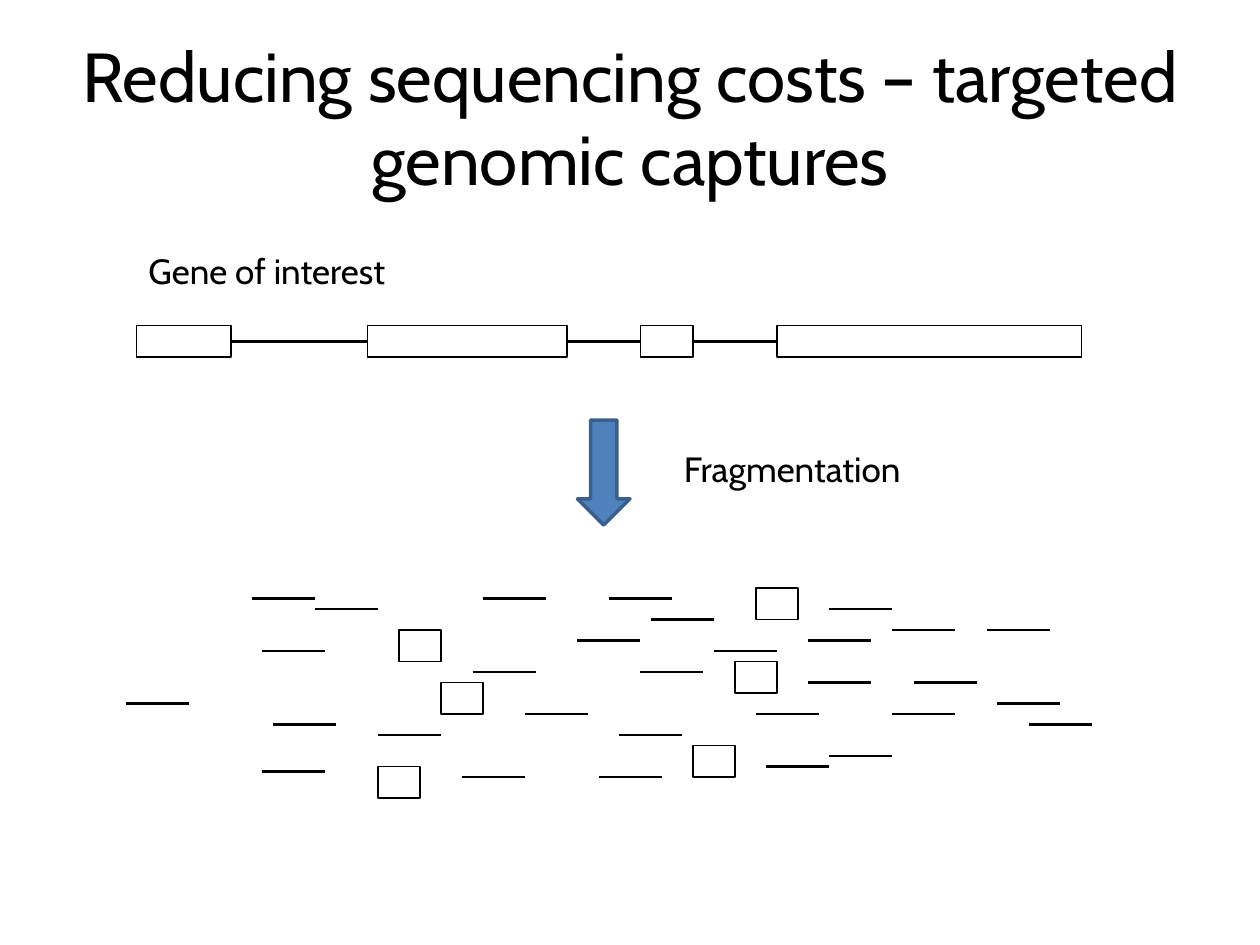
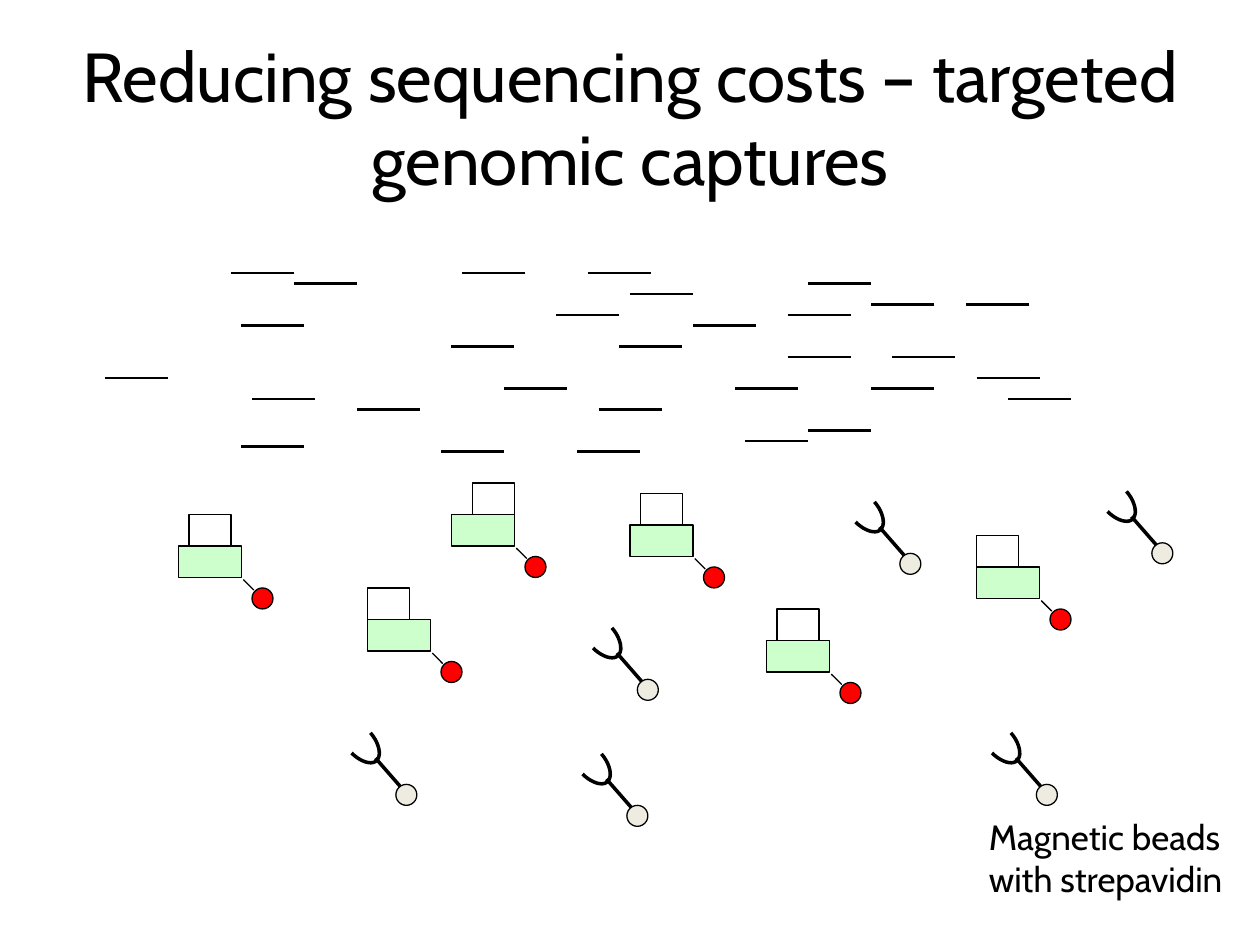
import pptx
import pptx.util
import pptx.dml.color
import pptx.enum.shapes
import pptx.enum.text
from lxml import etree
from pptx.oxml.ns import qn

SHAPE = pptx.enum.shapes.MSO_SHAPE
COLORS = {
    "ink": "000000",
    "paper": "FFFFFF",
    "arrow": "4F81BD",
    "arrow_edge": "3A5F8C",
    "probe": "CCFFCC",
    "biotin": "FF0000",
    "bead": "EEECE1",
}
FONT = "Cabin"
TITLE = "Reducing sequencing costs – targeted genomic captures"

# Drawing positions are counted in grid steps of a twelfth of an inch.
FRAGMENTS = [
    (24, 57), (46, 57), (58, 57), (30, 58), (79, 58), (62, 59),
    (85, 60), (94, 60), (55, 61), (77, 61), (25, 62), (68, 62),
    (45, 64), (61, 64), (77, 65), (87, 65), (12, 67), (95, 67),
    (50, 68), (72, 68), (85, 68), (26, 69), (98, 69), (36, 70),
    (59, 70), (79, 72), (73, 73), (25, 73.5), (44, 74), (57, 74),
]
EXONS = [(13, 9), (35, 19), (61, 5), (74, 29)]  # left, width
TARGETS = [(72, 56), (38, 60), (70, 63), (42, 65), (66, 71), (36, 73)]
# left and top of the probe, then how far its target is shifted right
PROBES = [(17, 52, 1), (60, 50, 1), (43, 49, 2),
          (35, 59, 0), (73, 61, 1), (93, 54, 0)]
BEADS = [(109, 51), (85, 52), (98, 74), (59, 76), (60, 64), (37, 74)]
FORK_CURVES = [
    [(-1.72, -4.2), (-0.88, -3.24), (-0.64, -2.04), (-1.12, -1.56)],
    [(-1.12, -1.56), (-1.6, -1.08), (-2.68, -1.44), (-3.52, -2.28)],
]


def grid(steps):
    return pptx.util.Inches(steps / 12)


def rgb(name):
    return pptx.dml.color.RGBColor.from_string(COLORS[name])


def bezier(points, steps=10):
    """Return points along a cubic curve."""
    a, b, c, d = points
    curve = []
    for i in range(steps + 1):
        t = i / steps
        u = 1 - t
        curve.append(tuple(
            u**3 * a[k] + 3 * u * u * t * b[k] + 3 * u * t * t * c[k] + t**3 * d[k]
            for k in (0, 1)))
    return curve


class Deck:
    def __init__(self):
        self.prs = pptx.Presentation()
        self.prs.slide_width = pptx.util.Inches(10)
        self.prs.slide_height = pptx.util.Inches(7.5)

    def new_slide(self):
        self.s = self.prs.slides.add_slide(self.prs.slide_layouts[5])
        self.s.background.fill.solid()
        self.s.background.fill.fore_color.rgb = rgb("paper")
        sp = self.s.shapes.title
        self.place(sp, 0.5, 0.3, 9, 1.25)
        tf = sp.text_frame
        tf.text = TITLE
        tf.auto_size = pptx.enum.text.MSO_AUTO_SIZE.NONE
        tf.vertical_anchor = pptx.enum.text.MSO_ANCHOR.MIDDLE
        tf.paragraphs[0].alignment = pptx.enum.text.PP_ALIGN.CENTER
        self.format_text(tf, 39.6)

    def place(self, sp, left, top, width, height):
        sp.left, sp.top = pptx.util.Inches(left), pptx.util.Inches(top)
        sp.width, sp.height = pptx.util.Inches(width), pptx.util.Inches(height)

    def format_text(self, tf, size):
        for p in tf.paragraphs:
            for r in p.runs:
                r.font.name = FONT
                r.font.size = pptx.util.Pt(size)
                r.font.color.rgb = rgb("ink")

    def label(self, text, left, top, height=0.44):
        sp = self.s.shapes.add_textbox(0, 0, 0, 0)
        self.place(sp, left, top, 2.08, height)
        tf = sp.text_frame
        tf.word_wrap = True
        tf.auto_size = pptx.enum.text.MSO_AUTO_SIZE.SHAPE_TO_FIT_TEXT
        tf.text = text
        self.format_text(tf, 20)

    def group(self):
        return self.s.shapes.add_group_shape()

    def shape(self, kind, left, top, width, height, fill="paper",
              edge="ink", weight=0.75, parent=None):
        sp = (parent or self.s).shapes.add_shape(
            kind, grid(left), grid(top), grid(width), grid(height))
        sp.shadow.inherit = False
        sp.fill.solid()
        sp.fill.fore_color.rgb = rgb(fill)
        sp.line.color.rgb = rgb(edge)
        sp.line.width = pptx.util.Pt(weight)
        return sp

    def line(self, x1, y1, x2, y2, weight=1.5, parent=None):
        cxn = (parent or self.s).shapes.add_connector(
            pptx.enum.shapes.MSO_CONNECTOR.STRAIGHT,
            grid(x1), grid(y1), grid(x2), grid(y2))
        cxn.line.color.rgb = rgb("ink")
        cxn.line.width = pptx.util.Pt(weight)
        etree.SubElement(cxn._element.spPr, qn("a:effectLst"))
        return cxn

    def fragments(self, dx=0, dy=0):
        for x, y in FRAGMENTS:
            self.line(x + dx, y + dy, x + dx + 6, y + dy)

    def target(self, x, y):
        self.shape(SHAPE.RECTANGLE, x, y, 4, 3)

    def gene(self):
        """Draw the exons joined by introns."""
        g = self.group()
        exons = [self.shape(SHAPE.RECTANGLE, x, 31, width, 3, parent=g)
                 for x, width in EXONS]
        for before, after in zip(exons, exons[1:]):
            cxn = self.line(0, 32.5, 1, 32.5, parent=g)
            cxn.begin_connect(before, 3)
            cxn.end_connect(after, 1)

    def probe(self, x, y):
        """Draw a capture probe with its biotin tag."""
        g = self.group()
        self.shape(SHAPE.RECTANGLE, x, y, 6, 3, "probe", parent=g)
        self.line(x + 6.17, y + 3.2, x + 7.17, y + 4.2, 0.75, parent=g)
        self.shape(SHAPE.OVAL, x + 7, y + 4, 2, 2, "biotin", parent=g)

    def bead(self, x, y):
        """Draw a magnetic bead with its two-pronged binding arm."""
        g = self.group()
        self.line(x + 1.28, y + 1.08, x - 1.24, y - 1.8, 2, parent=g)
        points = [(grid(x + px), grid(y + py))
                  for curve in FORK_CURVES for px, py in bezier(curve)]
        builder = g.shapes.build_freeform(*points[0])
        builder.add_line_segments(points[1:], close=False)
        fork = builder.convert_to_shape()
        fork.shadow.inherit = False
        fork.fill.background()
        fork.line.color.rgb = rgb("ink")
        fork.line.width = pptx.util.Pt(2)
        self.shape(SHAPE.OVAL, x + 0.7, y + 0.7, 2, 2, "bead", parent=g)


def fragmentation_slide(deck):
    deck.new_slide()
    deck.gene()
    deck.fragments()
    for x, y in TARGETS:
        deck.target(x, y)
    deck.label("Gene of interest", 1.08, 1.93)
    deck.shape(SHAPE.DOWN_ARROW, 55, 40, 5, 10, "arrow", "arrow_edge", 2)
    deck.label("Fragmentation", 5.33, 3.5)


def capture_slide(deck):
    deck.new_slide()
    deck.fragments(dx=-2, dy=-31)
    for x, y, shift in PROBES:
        deck.probe(x, y)
        deck.target(x + shift, y - 3)
    for x, y in BEADS:
        deck.bead(x, y)
    deck.label("Magnetic beads with strepavidin", 7.75, 6.42, 0.77)


def main():
    deck = Deck()
    fragmentation_slide(deck)
    capture_slide(deck)
    deck.prs.save("out.pptx")


if __name__ == "__main__":
    main()
